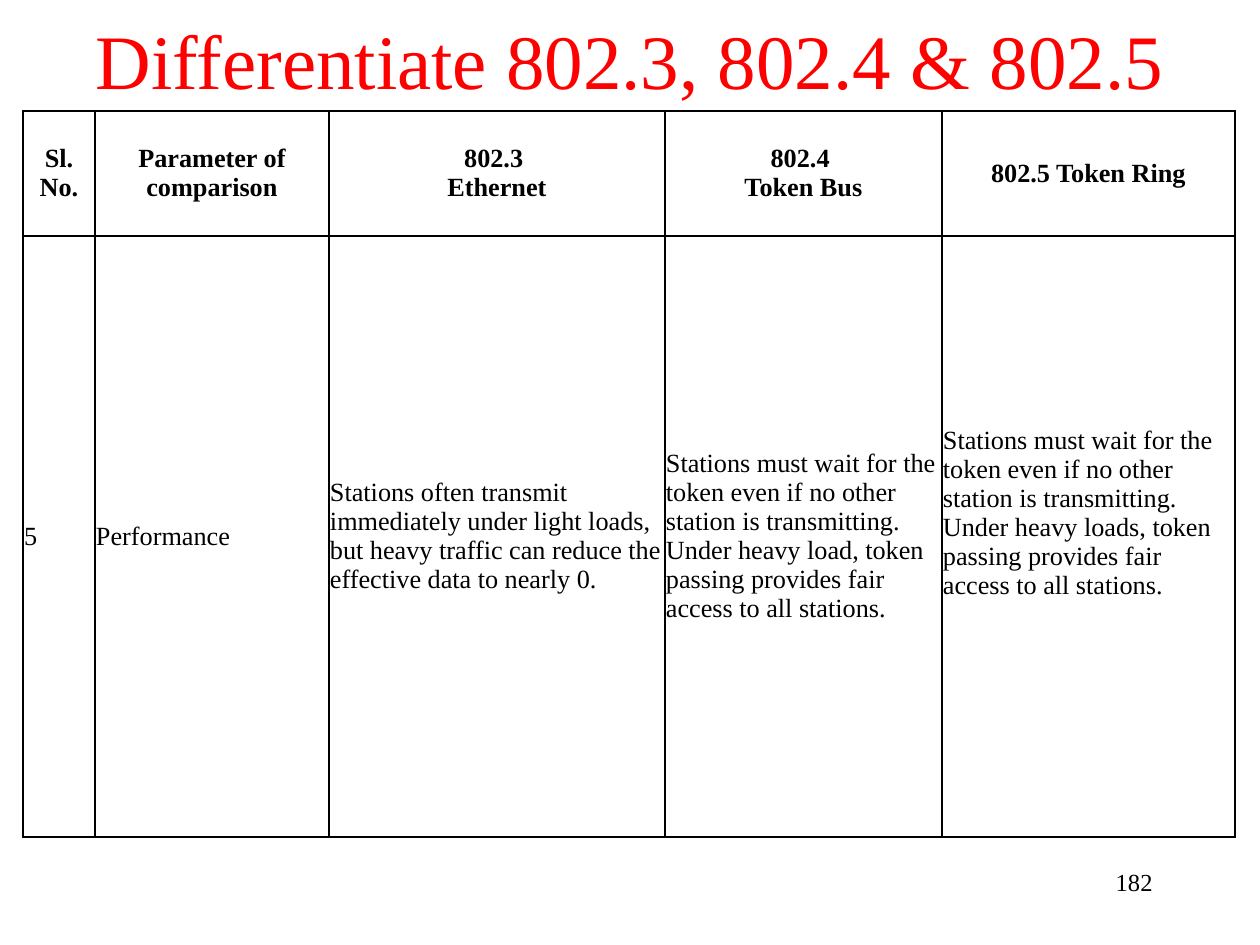
"""Build the slide that compares the performance of 802.3, 802.4 and 802.5."""
from dataclasses import dataclass

from lxml import etree
from pptx import Presentation, util as u
from pptx.dml.color import RGBColor
from pptx.enum import text
from pptx.oxml.ns import qn

PX_PER_INCH = 126


@dataclass(frozen=True)
class Theme:
    font: str = "Times New Roman"
    heading: str = "FF0000"
    ink: str = "000000"
    paper: str = "FFFFFF"
    title_size: int = 44
    cell_size: int = 15
    number_size: int = 14
    border: int = 1
    space_after: int = 10


THEME = Theme()
COLUMN_WIDTHS = [72, 234, 336, 277, 293]
ROW_HEIGHTS = [125, 601]
CELL_INSET = 1
RAISED_INSET = 47
HEADINGS = [
    ["Sl. No."],
    ["Parameter of comparison"],
    ["802.3 ", "Ethernet"],
    ["802.4 ", "Token Bus"],
    ["802.5 Token\u00a0Ring"],
]
LABELS = ["5", "Performance"]
FINDINGS = [
    "Stations often transmit immediately under light loads, "
    "but heavy traffic can reduce the effective data to nearly 0.",
    "Stations must wait for the token even if no other station is transmitting. "
    "Under heavy load, token passing provides fair access to all stations.",
    "Stations must wait for the token even if no other station is transmitting. "
    "Under heavy loads, token passing provides fair access to all stations.",
]


def px(length):
    """Turn whole pixels into EMU."""
    return u.Emu(round(length * u.Inches(1) / PX_PER_INCH))


def place(part, left, top, width, height):
    """Move and size a part of the slide."""
    part.left, part.top = px(left), px(top)
    part.width, part.height = px(width), px(height)


def write(frame, lines, size, color, align, bold=False, space_after=0):
    """Write one paragraph for each line."""
    frame.word_wrap = True
    for index, line in enumerate(lines):
        paragraph = frame.paragraphs[0] if index == 0 else frame.add_paragraph()
        paragraph.alignment = align
        paragraph.space_after = u.Pt(space_after)
        run = paragraph.add_run()
        run.text = line
        run.font.name = THEME.font
        run.font.size = u.Pt(size)
        run.font.bold = bold
        run.font.color.rgb = RGBColor.from_string(color)


def outline(cell):
    """Draw the four borders of a cell."""
    properties = cell._tc.get_or_add_tcPr()
    for side in ("a:lnL", "a:lnR", "a:lnT", "a:lnB"):
        line = etree.SubElement(properties, qn(side), w=str(u.Pt(THEME.border)))
        fill = etree.SubElement(line, qn("a:solidFill"))
        etree.SubElement(fill, qn("a:srgbClr"), val=THEME.ink)


def fill_cell(cell, lines, align, bold=False, space_after=0):
    """Format a table cell and write its text."""
    outline(cell)
    cell.fill.solid()
    cell.fill.fore_color.rgb = RGBColor.from_string(THEME.paper)
    cell.vertical_anchor = text.MSO_ANCHOR.MIDDLE
    cell.margin_left = cell.margin_right = px(CELL_INSET)
    cell.margin_top = cell.margin_bottom = 0
    write(cell.text_frame, lines, THEME.cell_size, THEME.ink, align, bold, space_after)


def add_title(slide):
    """Fill the title placeholder."""
    title = slide.shapes.title
    place(title, 0, 10, 1260, 97)
    frame = title.text_frame
    frame.auto_size = text.MSO_AUTO_SIZE.NONE
    frame.vertical_anchor = text.MSO_ANCHOR.MIDDLE
    write(frame, ["Differentiate 802.3, 802.4 & 802.5"], THEME.title_size,
          THEME.heading, text.PP_ALIGN.CENTER)


def add_comparison(slide):
    """Add the comparison table."""
    table = slide.shapes.add_table(
        len(ROW_HEIGHTS), len(COLUMN_WIDTHS), px(23), px(111),
        px(sum(COLUMN_WIDTHS)), px(sum(ROW_HEIGHTS))).table
    table.first_row = table.horz_banding = False
    for column, width in zip(table.columns, COLUMN_WIDTHS):
        column.width = px(width)
    for row, height in zip(table.rows, ROW_HEIGHTS):
        row.height = px(height)
    for column, heading in enumerate(HEADINGS):
        fill_cell(table.cell(0, column), heading, text.PP_ALIGN.CENTER, bold=True)
    for column, entry in enumerate(LABELS + FINDINGS):
        space_after = THEME.space_after if entry in FINDINGS else 0
        fill_cell(table.cell(1, column), [entry], text.PP_ALIGN.LEFT,
                  space_after=space_after)
    table.cell(1, len(COLUMN_WIDTHS) - 1).margin_bottom = px(RAISED_INSET)


def add_page_number(slide):
    """Add the page number at the lower right."""
    number = slide.shapes.add_textbox(px(903), px(861), px(262), px(63))
    write(number.text_frame, ["182"], THEME.number_size, THEME.ink,
          text.PP_ALIGN.RIGHT)


def main():
    """Build and save the slide."""
    deck = Presentation()
    deck.slide_width, deck.slide_height = px(1260), px(945)
    slide = deck.slides.add_slide(deck.slide_layouts.get_by_name("Title Only"))
    add_title(slide)
    add_comparison(slide)
    add_page_number(slide)
    deck.save("out.pptx")


if __name__ == "__main__":
    main()
